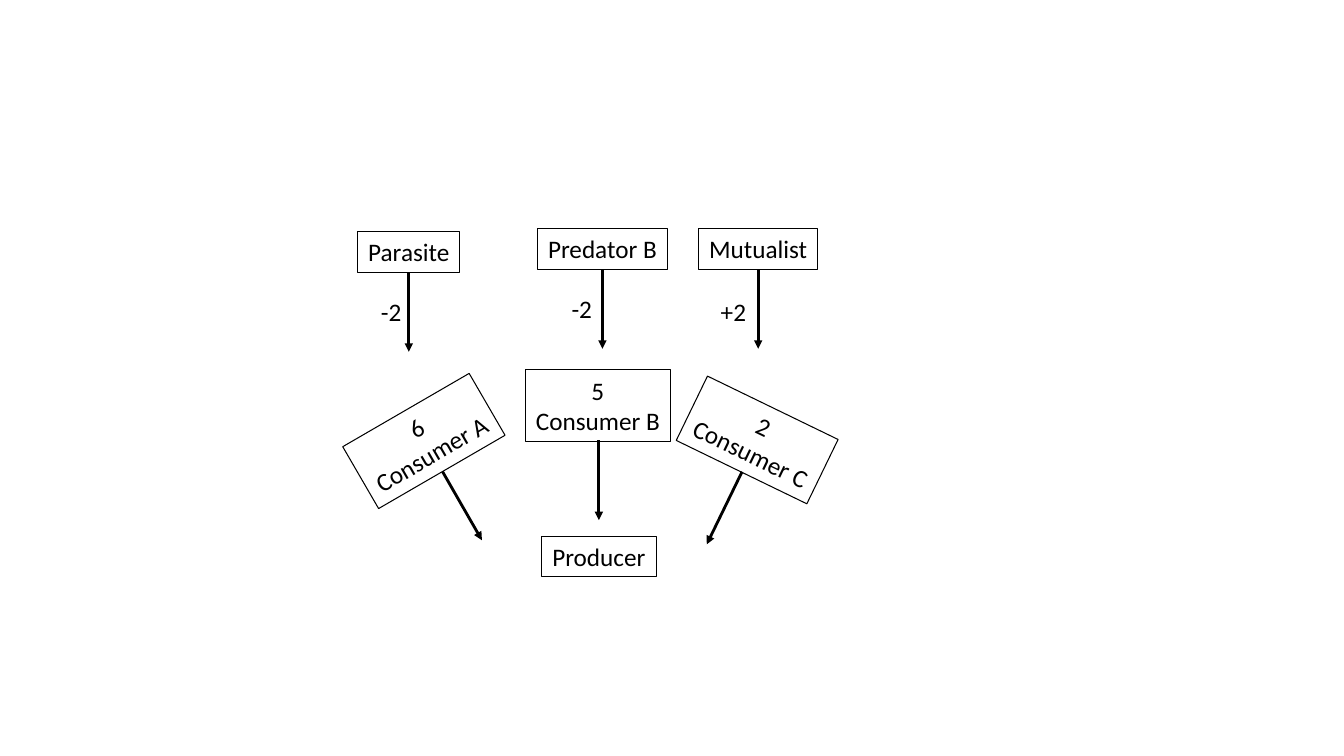
from pptx import Presentation
from pptx.dml.color import RGBColor
from pptx.enum.shapes import MSO_CONNECTOR, MSO_SHAPE
from pptx.enum.text import MSO_ANCHOR, MSO_AUTO_SIZE, PP_ALIGN
from pptx.oxml.ns import qn
from pptx.util import Inches, Pt
from lxml import etree

BLACK = "000000"
LABEL_HEIGHT, CONSUMER_HEIGHT = 0.4, 0.71
ARROW_LENGTH = 0.79


def color(hex_code):
    return RGBColor.from_string(hex_code)


def add_label(text, left, top, width, height=LABEL_HEIGHT, rotation=0, boxed=True):
    place = [Inches(v) for v in (left, top, width, height)]
    if boxed:
        label = slide.shapes.add_shape(MSO_SHAPE.RECTANGLE, *place)
        label.shadow.inherit = False
        label.fill.background()
        label.line.color.rgb = color(BLACK)
        label.line.width = Pt(0.75)
        label.rotation = rotation
    else:
        label = slide.shapes.add_textbox(*place)
    frame = label.text_frame
    frame.text = text
    frame.word_wrap = False
    frame.auto_size = MSO_AUTO_SIZE.SHAPE_TO_FIT_TEXT
    frame.vertical_anchor = MSO_ANCHOR.TOP
    for paragraph in frame.paragraphs:
        paragraph.alignment = PP_ALIGN.CENTER if boxed else PP_ALIGN.LEFT
        for run in paragraph.runs:
            run.font.name = "Calibri"
            run.font.size = Pt(18)
            run.font.color.rgb = color(BLACK)


prs = Presentation()
prs.slide_width, prs.slide_height = Inches(13.33), Inches(7.5)
slide = prs.slides.add_slide(prs.slide_layouts[6])
arrows = []

# Producer at the bottom
add_label("Producer", 5.37, 5.32, 1.14)

# Consumers with their strength, each pointing at the producer
consumers = [
    ("6\nConsumer A", 3.48, 4.02, 1.45, -30.1, (4.39, 4.68, 4.78, 5.36)),
    ("5\nConsumer B", 5.21, 3.67, 1.44, 0, (5.94, 4.37, 5.94, 4.37 + ARROW_LENGTH)),
    ("2\nConsumer C", 6.79, 4.01, 1.44, 25.9, (7.36, 4.68, 7.01, 5.4)),
]
for text, left, top, width, rotation, arrow in consumers:
    add_label(text, left, top, width, CONSUMER_HEIGHT, rotation)
    arrows.append(arrow)

# Species acting on the consumers, with the size of their effect
influences = [
    ("Predator B", 5.33, 2.27, 1.29, "-2", 5.57, 2.86, 0.41),
    ("Mutualist", 6.93, 2.27, 1.18, "+2", 7.05, 2.89, 0.46),
    ("Parasite", 3.55, 2.3, 1.01, "-2", 3.68, 2.89, 0.41),
]
for species, left, top, width, effect, effect_left, effect_top, effect_width in influences:
    add_label(species, left, top, width)
    add_label(effect, effect_left, effect_top, effect_width, boxed=False)
    center, bottom = left + width / 2, top + LABEL_HEIGHT
    arrows.append((center, bottom, center, bottom + ARROW_LENGTH))

# Arrows
for ends in arrows:
    arrow = slide.shapes.add_connector(MSO_CONNECTOR.STRAIGHT, *[Inches(v) for v in ends])
    arrow.line.color.rgb = color(BLACK)
    arrow.line.width = Pt(2)
    etree.SubElement(arrow.line._get_or_add_ln(), qn("a:tailEnd"), type="triangle")
    etree.SubElement(arrow._element.spPr, qn("a:effectLst"))

prs.save("out.pptx")
